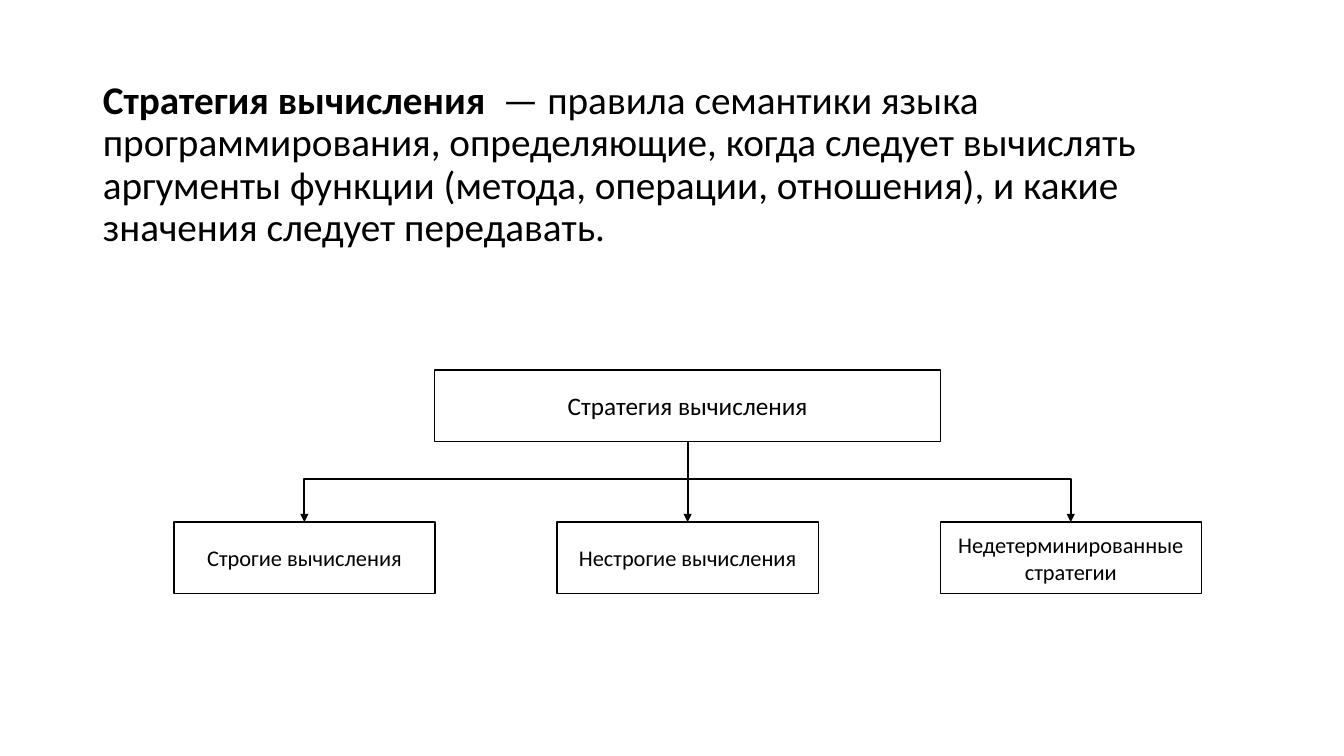
from lxml import etree
from pptx import Presentation
from pptx.dml.color import RGBColor
from pptx.enum.shapes import MSO_CONNECTOR, MSO_SHAPE
from pptx.enum.text import MSO_ANCHOR, MSO_AUTO_SIZE, PP_ALIGN
from pptx.oxml.ns import qn
from pptx.util import Inches, Pt

TERM = "Стратегия вычисления"
DEFINITION = (
    "  — правила семантики языка программирования, определяющие, когда следует "
    "вычислять аргументы функции (метода, операции, отношения), и какие "
    "значения следует передавать."
)
KINDS = ["Строгие вычисления", "Нестрогие вычисления", "Недетерминированные стратегии"]

BLACK = RGBColor(0, 0, 0)
WHITE = RGBColor(255, 255, 255)
FONT = "Calibri"

# Tree grid, in inches
CENTER_X = 6.82
COLUMN_STEP = 3.8
ROOT_TOP, KIND_TOP = 3.67, 5.18
ROOT_WIDTH, KIND_WIDTH = 5.02, 2.59
BOX_HEIGHT = 0.71
BRANCH_Y = 4.75


def format_run(run, size, bold=False):
    run.font.name = FONT
    run.font.size = Pt(size)
    run.font.bold = bold
    run.font.color.rgb = BLACK


def add_box(slide, label, center_x, top, width, size):
    box = slide.shapes.add_shape(
        MSO_SHAPE.RECTANGLE, Inches(center_x - width / 2), Inches(top),
        Inches(width), Inches(BOX_HEIGHT))
    box.shadow.inherit = False
    box.fill.solid()
    box.fill.fore_color.rgb = WHITE
    box.line.color.rgb = BLACK
    box.line.width = Pt(1)
    frame = box.text_frame
    frame.word_wrap = True
    frame.vertical_anchor = MSO_ANCHOR.MIDDLE
    frame.text = label
    frame.paragraphs[0].alignment = PP_ALIGN.CENTER
    format_run(frame.paragraphs[0].runs[0], size)
    return box


def add_arrow(slide, kind, start, end):
    arrow = slide.shapes.add_connector(kind, *map(Inches, start + end))
    arrow.line.color.rgb = BLACK
    arrow.line.width = Pt(1.5)
    properties = arrow.element.spPr
    etree.SubElement(properties.find(qn("a:ln")), qn("a:tailEnd"), type="triangle")
    etree.SubElement(properties, qn("a:effectLst"))
    if kind == MSO_CONNECTOR.ELBOW:  # one bend: across, then down
        properties.find(qn("a:prstGeom")).set("prst", "bentConnector2")
    return arrow


def add_definition(slide):
    body = slide.placeholders[1]
    body.left, body.top, body.width, body.height = map(Inches, (0.92, 0.75, 11.5, 2.74))
    frame = body.text_frame
    frame.word_wrap = True
    frame.auto_size = MSO_AUTO_SIZE.NONE
    frame.vertical_anchor = MSO_ANCHOR.TOP
    paragraph = frame.paragraphs[0]
    paragraph.line_spacing = 0.9
    paragraph.space_before = Pt(10)
    for text, bold in ((TERM, True), (DEFINITION, False)):
        run = paragraph.add_run()
        run.text = text
        format_run(run, 28, bold)
    bulletless = paragraph._p.get_or_add_pPr()
    bulletless.set("marL", "0")
    bulletless.set("indent", "0")
    etree.SubElement(bulletless, qn("a:buNone"))


def add_tree(slide):
    root = add_box(slide, TERM, CENTER_X, ROOT_TOP, ROOT_WIDTH, 18)
    centers = [CENTER_X + COLUMN_STEP * (i - 1) for i in range(len(KINDS))]
    boxes = [add_box(slide, kind, x, KIND_TOP, KIND_WIDTH, 16)
             for kind, x in zip(KINDS, centers)]
    for box, x in zip(boxes, centers):
        if x == CENTER_X:
            trunk = add_arrow(slide, MSO_CONNECTOR.STRAIGHT,
                              (x, ROOT_TOP + BOX_HEIGHT), (x, KIND_TOP))
            trunk.begin_connect(root, 2)
            trunk.end_connect(box, 0)
        else:
            add_arrow(slide, MSO_CONNECTOR.ELBOW, (CENTER_X, BRANCH_Y), (x, KIND_TOP))


def main():
    deck = Presentation()
    deck.slide_width, deck.slide_height = Inches(13.33), Inches(7.5)
    slide = deck.slides.add_slide(deck.slide_layouts[1])
    title = slide.shapes.title.element
    title.getparent().remove(title)
    add_definition(slide)
    add_tree(slide)
    deck.save("out.pptx")


if __name__ == "__main__":
    main()
